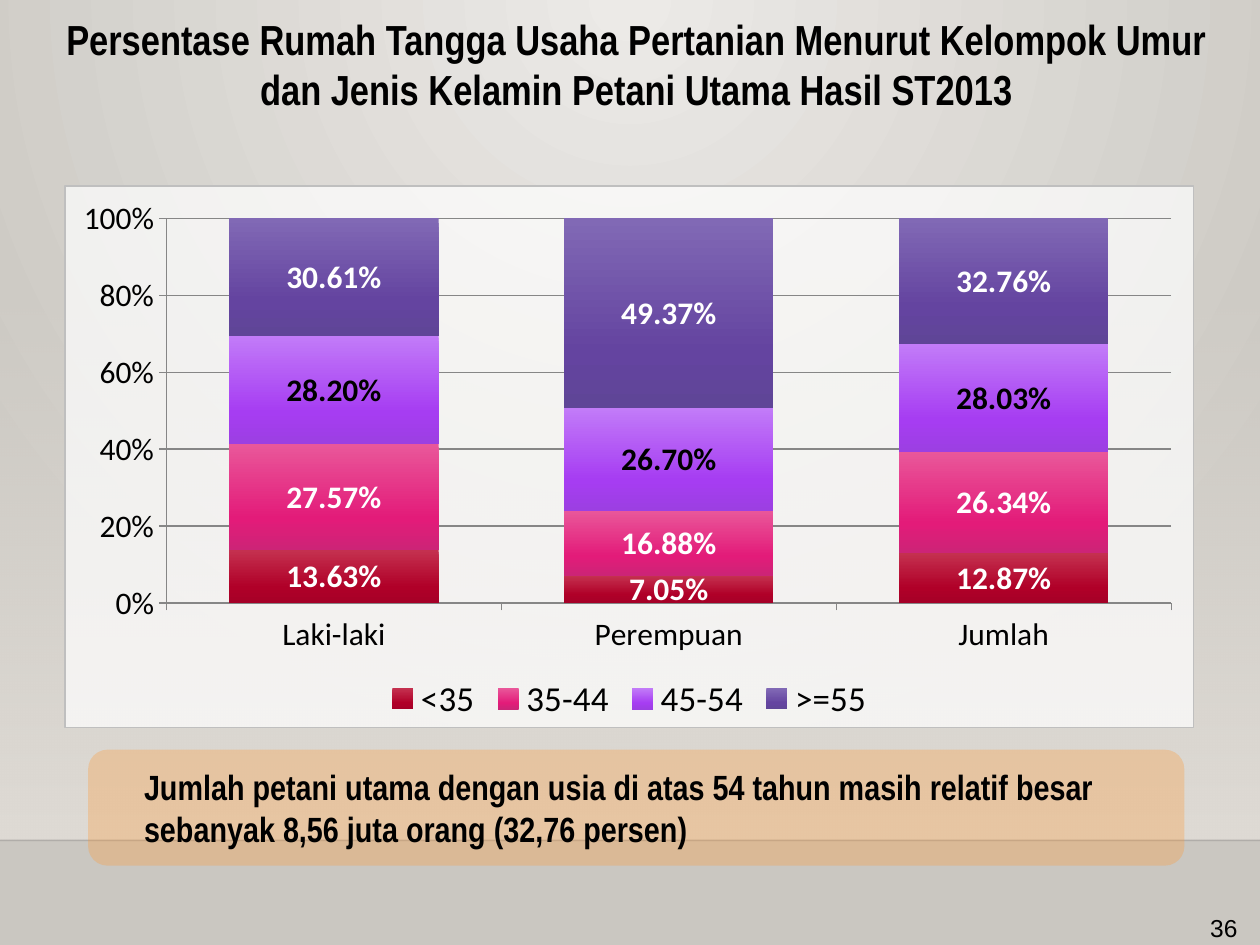
from lxml import etree
from pptx import Presentation
from pptx.chart.data import CategoryChartData
from pptx.dml.color import RGBColor
from pptx.enum.chart import XL_CHART_TYPE, XL_LABEL_POSITION, XL_LEGEND_POSITION, XL_TICK_MARK
from pptx.enum.shapes import MSO_CONNECTOR, MSO_SHAPE
from pptx.enum.text import MSO_ANCHOR, PP_ALIGN
from pptx.oxml import parse_xml
from pptx.oxml.ns import nsdecls, qn
from pptx.util import Inches, Pt

STACKED = XL_CHART_TYPE.COLUMN_STACKED_100
LABEL_CENTER = XL_LABEL_POSITION.CENTER
LEGEND_BOTTOM = XL_LEGEND_POSITION.BOTTOM
TICK_OUT = XL_TICK_MARK.OUTSIDE
STRAIGHT = MSO_CONNECTOR.STRAIGHT
RECTANGLE, ROUNDED = MSO_SHAPE.RECTANGLE, MSO_SHAPE.ROUNDED_RECTANGLE
MIDDLE = MSO_ANCHOR.MIDDLE
LEFT, CENTER, RIGHT = PP_ALIGN.LEFT, PP_ALIGN.CENTER, PP_ALIGN.RIGHT

WIDTH, HEIGHT = 10, 7.5
HORIZON = 6.67
BAND_TOP = 2.2
TITLE = ("Persentase Rumah Tangga Usaha Pertanian Menurut Kelompok Umur "
         "dan Jenis Kelamin Petani Utama Hasil ST2013")
NOTE = ("Jumlah petani utama dengan usia di atas 54 tahun masih relatif besar "
        "sebanyak 8,56 juta orang (32,76 persen)")
PAGE_NUMBER = "36"
CATEGORIES = ["Laki-laki", "Perempuan", "Jumlah"]
# age group, shares, gradient from top to bottom, label colour
AGE_GROUPS = [
    ("<35", (0.1363, 0.0705, 0.1287), ("C4304F", "B00028", "A50027"), "FFFFFF"),
    ("35-44", (0.2757, 0.1688, 0.2634), ("E9579A", "E31B79", "CC2477"), "FFFFFF"),
    ("45-54", (0.282, 0.267, 0.2803), ("C27BF8", "A63DF2", "9C3FE2"), "000000"),
    (">=55", (0.3061, 0.4937, 0.3276), ("8169B5", "6444A0", "5F4597"), "FFFFFF"),
]
SERIES_STOPS = (0, 70, 100)
PLOT_AREA = {"x": 0.09, "y": 0.06, "w": 0.89, "h": 0.71}
DOWNWARD = '<a:lin ang="5400000" scaled="0"/>'
FROM_TOP_CENTER = '<a:path path="circle"><a:fillToRect l="43000" r="43000" b="100000"/></a:path>'


def rgb(color):
    return RGBColor.from_string(color)


def set_alpha(properties, percent):
    """Make the first solid colour inside the properties partly transparent."""
    color = properties.find(".//" + qn("a:srgbClr"))
    etree.SubElement(color, qn("a:alpha"), val=str(percent * 1000))


def set_gradient(properties, stops, direction):
    """Replace a solid fill by (position, colour, opacity) stops, in percent."""
    stop_xml = "".join(
        f'<a:gs pos="{position * 1000}"><a:srgbClr val="{color}">'
        f'<a:alpha val="{opacity * 1000}"/></a:srgbClr></a:gs>'
        for position, color, opacity in stops)
    solid = properties.find(qn("a:solidFill"))
    solid.getparent().replace(solid, parse_xml(
        f'<a:gradFill {nsdecls("a")} rotWithShape="1"><a:gsLst>{stop_xml}</a:gsLst>'
        f'{direction}</a:gradFill>'))


def add_block(slide, preset, place, color):
    block = slide.shapes.add_shape(preset, *map(Inches, place))
    block.shadow.inherit = False
    block.fill.solid()
    block.fill.fore_color.rgb = rgb(color)
    block.line.fill.background()
    return block


def write_text(shape, text, size, font_name, align, bold=False):
    frame = shape.text_frame
    frame.word_wrap = True
    frame.vertical_anchor = MIDDLE
    para = frame.paragraphs[0]
    para.text = text
    para.alignment = align
    para.font.size = Pt(size)
    para.font.name = font_name
    para.font.bold = bold
    para.font.color.rgb = rgb("000000")
    return para


def add_text(slide, place, *text_settings):
    box = slide.shapes.add_textbox(*map(Inches, place))
    write_text(box, *text_settings)


def add_backdrop(slide):
    slide.background.fill.solid()
    background = slide.element.find(".//" + qn("p:bgPr"))
    set_gradient(background, [(0, "ECEAE7", 100), (100, "CAC7C1", 100)], FROM_TOP_CENTER)
    band = add_block(slide, RECTANGLE, (0, BAND_TOP, WIDTH, HORIZON - BAND_TOP), "DFDBD5")
    set_gradient(band.element.spPr, [(0, "DFDBD5", 0), (100, "DFDBD5", 100)], DOWNWARD)
    horizon = slide.shapes.add_connector(
        STRAIGHT, 0, Inches(HORIZON), Inches(WIDTH), Inches(HORIZON))
    horizon.line.color.rgb = rgb("000001")
    horizon.line.width = Pt(1)
    properties = horizon.element.spPr
    set_alpha(properties, 20)
    etree.SubElement(properties, qn("a:effectLst"))


def style_frame(chart):
    """Give the chart its translucent panel and a fixed plot area."""
    panel = parse_xml(
        f'<c:spPr {nsdecls("c", "a")}><a:solidFill><a:srgbClr val="FFFFFF"/></a:solidFill>'
        '<a:ln w="9525"><a:solidFill><a:srgbClr val="BFBFBF"/></a:solidFill></a:ln></c:spPr>')
    set_alpha(panel, 71)
    chart_element = chart.element.find(qn("c:chart"))
    chart_element.addnext(panel)
    plot_area = chart_element.find(qn("c:plotArea"))
    for old in plot_area.findall(qn("c:layout")):
        plot_area.remove(old)
    modes = '<c:layoutTarget val="inner"/><c:xMode val="edge"/><c:yMode val="edge"/>'
    sides = "".join(f'<c:{side} val="{share}"/>' for side, share in PLOT_AREA.items())
    plot_area.insert(0, parse_xml(
        f'<c:layout {nsdecls("c")}><c:manualLayout>{modes}{sides}</c:manualLayout></c:layout>'))


def add_age_chart(slide, place):
    data = CategoryChartData(number_format="0.00%")
    data.categories = CATEGORIES
    for name, shares, _, _ in AGE_GROUPS:
        data.add_series(name, shares)
    chart = slide.shapes.add_chart(STACKED, *map(Inches, place), data).chart
    chart.has_title = False
    chart.font.size = Pt(18)
    chart.font.name = "Calibri"
    chart.font.color.rgb = rgb("000000")
    style_frame(chart)

    chart.has_legend = True
    chart.legend.position = LEGEND_BOTTOM
    chart.legend.include_in_layout = False
    chart.legend.font.size = Pt(20)

    value_axis = chart.value_axis
    value_axis.major_unit = 0.2
    value_axis.tick_labels.number_format = "0%"
    value_axis.tick_labels.number_format_is_linked = False
    value_axis.major_gridlines.format.line.color.rgb = rgb("868686")
    for axis in (value_axis, chart.category_axis):
        axis.major_tick_mark = TICK_OUT
        axis.format.line.color.rgb = rgb("868686")

    plot = chart.plots[0]
    plot.gap_width = 60
    plot.overlap = 100
    plot.vary_by_categories = False
    for series, (_, _, shades, label_color) in zip(plot.series, AGE_GROUPS):
        series.format.fill.solid()
        series.format.fill.fore_color.rgb = rgb(shades[0])
        stops = [(stop, shade, 100) for stop, shade in zip(SERIES_STOPS, shades)]
        set_gradient(series._element.find(qn("c:spPr")), stops, DOWNWARD)
        labels = series.data_labels
        labels.show_value = True
        labels.position = LABEL_CENTER
        labels.number_format = "0.00%"
        labels.number_format_is_linked = False
        labels.font.size = Pt(18)
        labels.font.bold = True
        labels.font.color.rgb = rgb(label_color)


def main():
    deck = Presentation()
    deck.slide_width, deck.slide_height = Inches(WIDTH), Inches(HEIGHT)
    slide = deck.slides.add_slide(deck.slide_layouts[6])
    add_backdrop(slide)
    add_text(slide, (0.35, 0.05, 9.4, 0.91), TITLE, 24, "Arial Narrow", CENTER, True)
    note = add_block(slide, ROUNDED, (0.7, 5.95, 8.7, 0.92), "FF9933")
    set_alpha(note.element.spPr, 30)
    para = write_text(note, NOTE, 20, "Arial Narrow", LEFT, True)
    para._p.get_or_add_pPr().set("marL", str(Inches(0.3)))
    add_age_chart(slide, (0.51, 1.47, 8.97, 4.31))
    add_text(slide, (7.59, 7.16, 2.33, 0.4), PAGE_NUMBER, 14, "Arial", RIGHT)
    deck.save("out.pptx")


if __name__ == "__main__":
    main()
